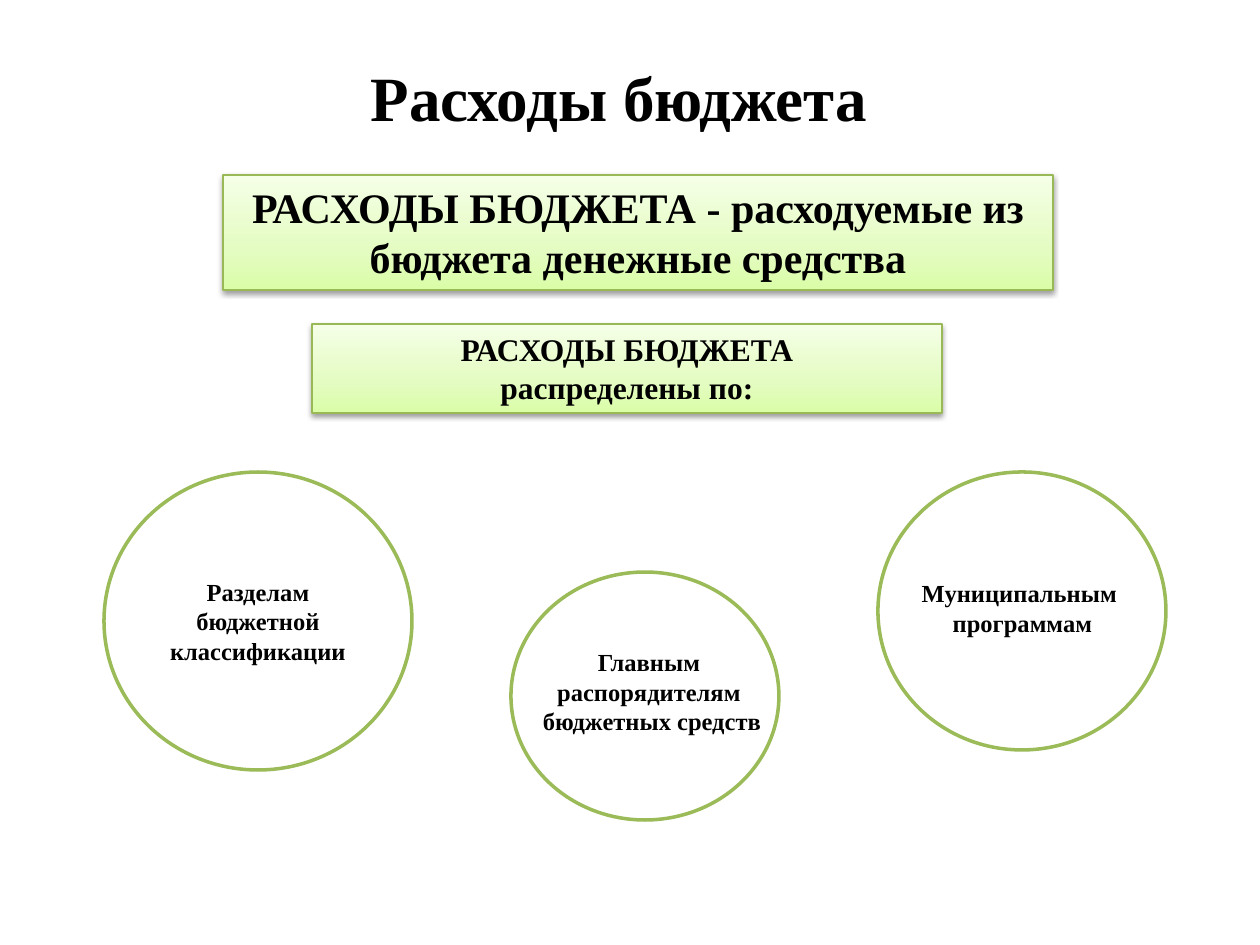
from copy import deepcopy
from lxml.etree import fromstring
from pptx import Presentation
from pptx.dml.color import RGBColor
from pptx.enum.shapes import MSO_SHAPE as SHAPE
from pptx.enum.text import MSO_ANCHOR as ANCHOR, PP_ALIGN as ALIGN
from pptx.util import Pt

PX = 914400 // 126
BLACK = RGBColor(0x00, 0x00, 0x00)
WHITE = RGBColor(0xFF, 0xFF, 0xFF)
GREEN = RGBColor(0x9B, 0xBB, 0x59)
EDGE = RGBColor(0x98, 0xB9, 0x55)
STOPS = [
    (0, RGBColor(0xDA, 0xFD, 0xA7)),
    (0.35, RGBColor(0xE4, 0xFC, 0xC2)),
    (1, RGBColor(0xF5, 0xFF, 0xE7)),
]
SHADOW = (
    '<a:effectLst xmlns:a="http://schemas.openxmlformats.org/drawingml/2006/main">'
    '<a:outerShdw blurRad="39370" dist="20320" dir="5400000" rotWithShape="0">'
    '<a:srgbClr val="000000"><a:alpha val="38000"/></a:srgbClr>'
    '</a:outerShdw></a:effectLst>'
)


def emu(*box):
    return [v * PX for v in box]


def write(tf, lines, size, anchor, wrap=True):
    tf.word_wrap = wrap
    tf.vertical_anchor = anchor
    for i, line in enumerate(lines):
        p = tf.add_paragraph() if i else tf.paragraphs[0]
        p.alignment = ALIGN.CENTER
        r = p.add_run()
        r.text = line
        r.font.color.rgb = BLACK
        for key, value in {"name": "Times New Roman", "size": Pt(size), "bold": True}.items():
            setattr(r.font, key, value)


prs = Presentation()
prs.slide_width, prs.slide_height = emu(1260, 945)
s = prs.slides.add_slide(prs.slide_layouts[5])

title = s.shapes.title
title.left, title.top, title.width, title.height = emu(35, 16, 1168, 160)
write(title.text_frame, ["Расходы бюджета"], 36, ANCHOR.MIDDLE)

banners = [
    ((223, 175, 830, 115), 24, ["РАСХОДЫ БЮДЖЕТА - расходуемые из бюджета денежные средства"]),
    ((312, 324, 630, 89), 18, ["РАСХОДЫ БЮДЖЕТА", "распределены по:"]),
]
for box, size, lines in banners:
    sp = s.shapes.add_shape(SHAPE.RECTANGLE, *emu(*box))
    sp.fill.gradient()
    sp.fill.gradient_angle = 90
    stop_list = sp._element.spPr.find(".//{*}gsLst")
    stop_list.append(deepcopy(stop_list[0]))
    for stop, (position, color) in zip(sp.fill.gradient_stops, STOPS):
        stop.position = position
        stop.color.rgb = color
    sp.line.color.rgb = EDGE
    sp.line.width = Pt(0.75)
    sp._element.spPr.append(fromstring(SHADOW))
    write(sp.text_frame, lines, size, ANCHOR.TOP)

circles = [
    ((104, 472, 308, 298), ["Разделам бюджетной классификации"]),
    ((511, 572, 268, 248), []),
    ((878, 472, 288, 278), []),
]
for box, lines in circles:
    sp = s.shapes.add_shape(SHAPE.OVAL, *emu(*box))
    sp.shadow.inherit = False
    sp.fill.solid()
    sp.fill.fore_color.rgb = WHITE
    sp.line.color.rgb = GREEN
    sp.line.width = Pt(2)
    write(sp.text_frame, lines, 14, ANCHOR.MIDDLE)

labels = [
    ((529, 641, 246, 102), ["Главным ", "распорядителям ", "бюджетных средств"]),
    ((908, 572, 229, 72), ["Муниципальным ", "программам"]),
]
for box, lines in labels:
    sp = s.shapes.add_textbox(*emu(*box))
    write(sp.text_frame, lines, 14, ANCHOR.TOP, wrap=False)

prs.save("out.pptx")
